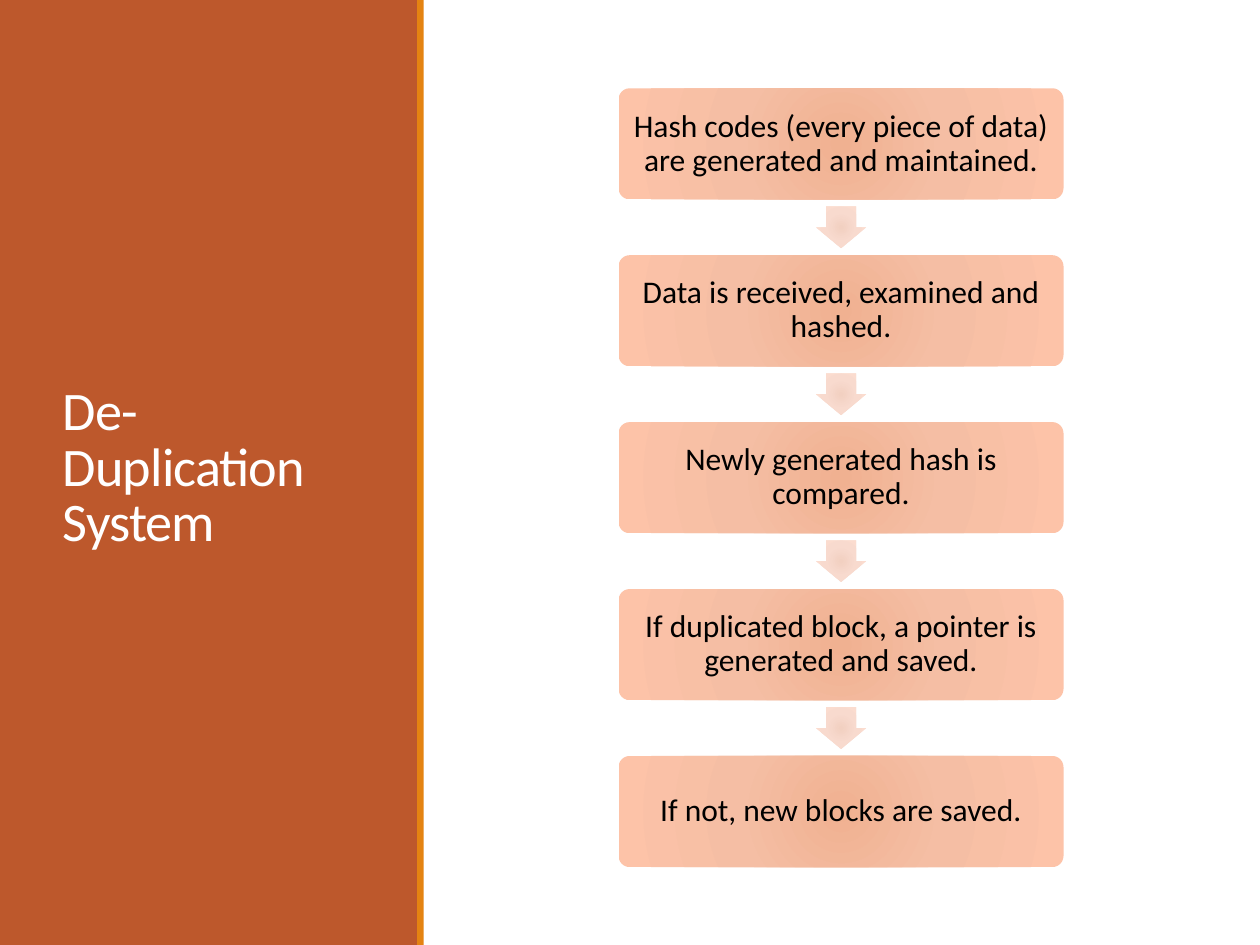
from dataclasses import dataclass

from lxml.etree import SubElement
from pptx import Presentation
from pptx.dml.color import RGBColor
from pptx.enum.shapes import MSO_SHAPE as Shape
from pptx.enum.text import MSO_ANCHOR as Anchor, PP_ALIGN as Align
from pptx.oxml.ns import qn
from pptx.util import Cm, Pt

COLORS = {
    "panel": "BD582C",
    "stripe": "E48312",
    "title": "FFFFFF",
    "text": "000000",
}
# Radial gradients as (position in percent, colour)
BOX_STOPS = ((0, "F0B191"), (45, "F5BEA4"), (100, "FDC3A8"))
ARROW_STOPS = ((0, "F2D0C1"), (45, "F8DACE"), (100, "FDDDD0"))

STEPS = (
    "Hash codes (every piece of data) are generated and maintained.",
    "Data is received, examined and hashed.",
    "Newly generated hash is compared.",
    "If duplicated block, a pointer is generated and saved.",
    "If not, new blocks are saved.",
)


@dataclass(frozen=True)
class Box:
    """Position and size in centimetres."""
    x: float
    y: float
    w: float
    h: float

    def lengths(self) -> tuple:
        return Cm(self.x), Cm(self.y), Cm(self.w), Cm(self.h)


# Flow layout: first and last step tops set the pitch
FIRST_TOP, LAST_TOP = 1.78, 15.24
PITCH = (LAST_TOP - FIRST_TOP) / (len(STEPS) - 1)
STEP_X, STEP_W, STEP_H = 12.47, 8.97, 2.24
ARROW_LEN, ARROW_THICK = 0.84, 1.01


def add_shape(slide, kind, box: Box):
    sp = slide.shapes.add_shape(kind, *box.lengths())
    sp.shadow.inherit = False
    sp.line.fill.background()
    return sp


def add_bar(slide, box: Box, color: str) -> None:
    sp = add_shape(slide, Shape.RECTANGLE, box)
    sp.fill.solid()
    sp.fill.fore_color.rgb = RGBColor.from_string(COLORS[color])


def fill_radial(sp, stops: tuple) -> None:
    sp.fill.gradient()
    grad = sp._element.spPr.find(qn("a:gradFill"))
    for child in list(grad):
        grad.remove(child)
    gs_list = SubElement(grad, qn("a:gsLst"))
    for pos, color in stops:
        gs = SubElement(gs_list, qn("a:gs"), pos=str(pos * 1000))
        SubElement(gs, qn("a:srgbClr"), val=color)
    circle = SubElement(grad, qn("a:path"), path="circle")
    SubElement(circle, qn("a:fillToRect"), {side: "100000" for side in "ltrb"})


def write(sp, text: str, size: float, color: str, align, spacing: float):
    tf = sp.text_frame
    tf.word_wrap = True
    tf.vertical_anchor = Anchor.MIDDLE
    p = tf.paragraphs[0]
    p.alignment = align
    p.line_spacing = spacing
    r = p.add_run()
    r.text = text
    r.font.name = "Calibri"
    r.font.size = Pt(size)
    r.font.color.rgb = RGBColor.from_string(COLORS[color])
    return r


def add_step(slide, y: float, text: str) -> None:
    sp = add_shape(slide, Shape.ROUNDED_RECTANGLE, Box(STEP_X, y, STEP_W, STEP_H))
    sp.adjustments[0] = 0.1
    fill_radial(sp, BOX_STOPS)
    tf = sp.text_frame
    tf.margin_left = tf.margin_right = tf.margin_top = tf.margin_bottom = Cm(0.18)
    write(sp, text, 18, "text", Align.CENTER, 0.9)


def add_arrow(slide, step_y: float) -> None:
    """Down arrow centred in the gap below the step at step_y."""
    center_x = STEP_X + STEP_W / 2
    center_y = step_y + (STEP_H + PITCH) / 2
    box = Box(center_x - ARROW_LEN / 2, center_y - ARROW_THICK / 2,
              ARROW_LEN, ARROW_THICK)
    sp = add_shape(slide, Shape.RIGHT_ARROW, box)
    sp.rotation = 90
    sp.adjustments[0] = 0.6
    sp.adjustments[1] = 0.5
    fill_radial(sp, ARROW_STOPS)


def main() -> None:
    prs = Presentation()
    prs.slide_width, prs.slide_height = Cm(25.4), Cm(19.05)
    s = prs.slides.add_slide(prs.slide_layouts[6])

    # Title panel
    add_bar(s, Box(0, 0, 8.43, 19.05), "panel")
    title = s.shapes.add_textbox(*Box(1.02, 1.45, 6.43, 16.03).lengths())
    r = write(title, "De-Duplication System", 31, "title", Align.LEFT, 0.85)
    r.font._element.set("spc", "-50")
    add_bar(s, Box(8.41, 0, 0.13, 19.05), "stripe")

    # Process flow
    for i, text in enumerate(STEPS):
        y = FIRST_TOP + i * PITCH
        add_step(s, y, text)
        if i < len(STEPS) - 1:
            add_arrow(s, y)

    prs.save("out.pptx")


if __name__ == "__main__":
    main()
